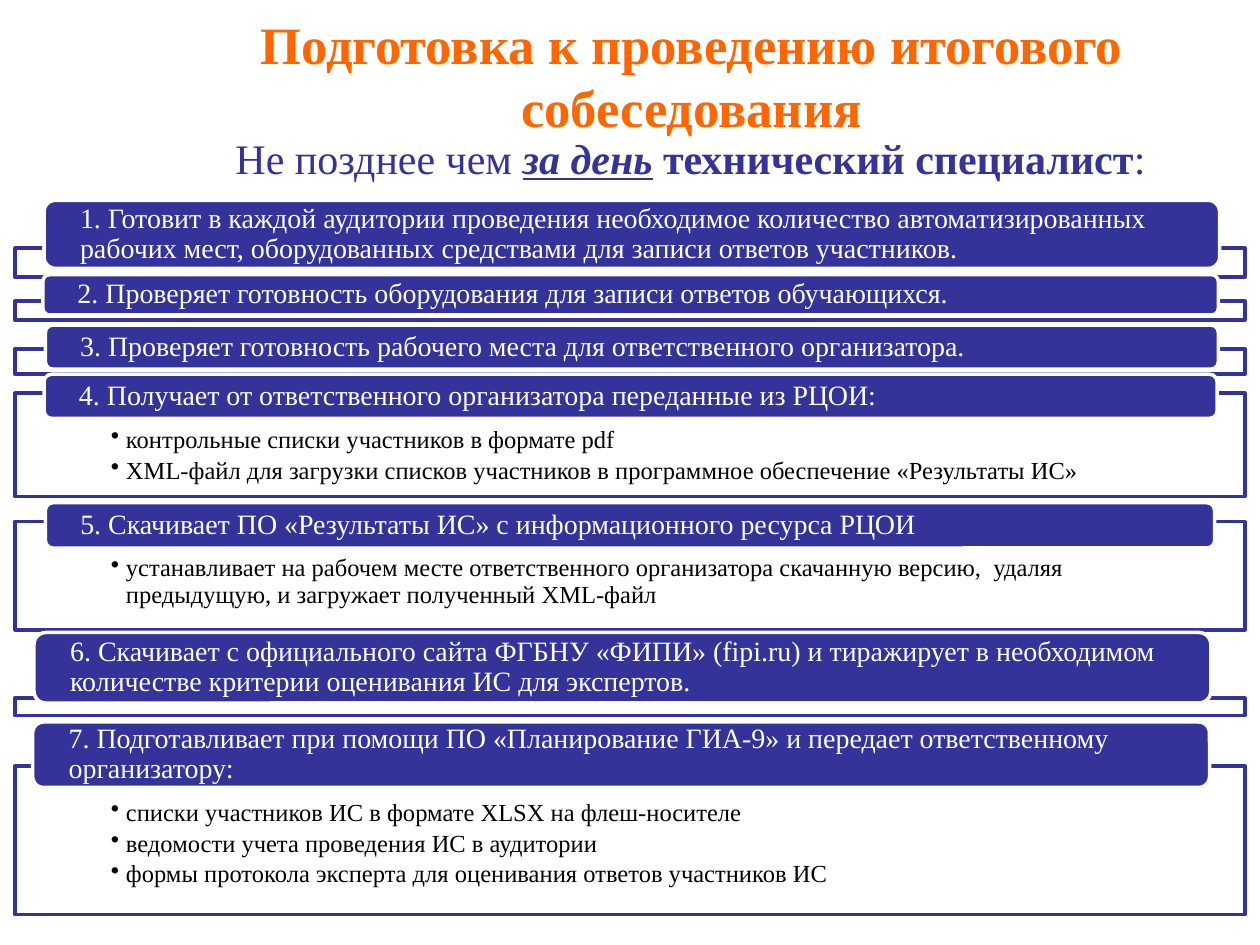
from dataclasses import dataclass

from lxml.etree import SubElement
from pptx import Presentation
from pptx.dml.color import RGBColor
from pptx.enum.shapes import MSO_SHAPE as Preset
from pptx.enum.text import MSO_ANCHOR as Anchor, MSO_AUTO_SIZE as AutoSize, PP_ALIGN as Align
from pptx.oxml.ns import qn
from pptx.util import Inches, Pt

ORANGE = RGBColor(0xFF, 0x66, 0x00)
INDIGO = RGBColor(0x33, 0x33, 0x99)
WHITE = RGBColor(0xFF, 0xFF, 0xFF)
BLACK = RGBColor(0x00, 0x00, 0x00)
COLUMNS, ROWS = 100, 75
FRAME_LEFT, FRAME_WIDTH = 1.2, 97.6

# Each step: bar (left, top, width, height), frame (top, height), heading, items
STEPS = [
    ((3.5, 15.9, 93.3, 5.4), (19.7, 2.3),
     "1. Готовит в каждой аудитории проведения необходимое количество автоматизированных "
     "рабочих мест, оборудованных средствами для записи ответов участников.", []),
    ((3.4, 21.8, 93.3, 3.2), (23.9, 1.5),
     "2. Проверяет готовность оборудования для записи ответов обучающихся.", []),
    ((3.6, 25.8, 93.1, 3.5), (27.7, 2),
     "3. Проверяет готовность рабочего места для ответственного организатора.", []),
    ((3.5, 29.7, 93.1, 3.5), (31.2, 8.2),
     "4. Получает от ответственного организатора переданные из РЦОИ:",
     ["контрольные списки участников в формате pdf",
      "XML-файл для загрузки списков участников в программное обеспечение «Результаты ИС»"]),
    ((3.6, 39.9, 92.8, 3.6), (41.4, 8.6),
     "5. Скачивает ПО «Результаты ИС» с информационного ресурса РЦОИ",
     ["устанавливает на рабочем месте ответственного организатора скачанную версию,  удаляя "
      "предыдущую, и загружает полученный XML-файл"]),
    ((2.7, 50.2, 93.4, 5.6), (55.4, 1.4),
     "6. Скачивает с официального сайта ФГБНУ «ФИПИ» (fipi.ru) и тиражирует в необходимом "
     "количестве критерии оценивания ИС для экспертов.", []),
    ((2.6, 57.3, 93.4, 5.2), (60.8, 11.8),
     "7. Подготавливает при помощи ПО «Планирование ГИА-9» и передает ответственному "
     "организатору:",
     ["списки участников ИС в формате XLSX на флеш-носителе",
      "ведомости учета проведения ИС в аудитории",
      "формы протокола эксперта для оценивания ответов участников ИС"]),
]


@dataclass
class PageBuilder:
    deck: object
    page: object
    font: str = "Times New Roman"

    def place(self, left, top, width, height):
        column, row = self.deck.slide_width / COLUMNS, self.deck.slide_height / ROWS
        return [round(n * unit) for n, unit in
                zip((left, top, width, height), (column, row, column, row))]

    def style(self, para, size, color, bold=None):
        for span in para.runs:
            span.font.name, span.font.size = self.font, Pt(size)
            span.font.color.rgb, span.font.bold = color, bold

    def title(self, text, area):
        box = self.page.shapes.title
        box.left, box.top, box.width, box.height = self.place(*area)
        frame = box.text_frame
        frame.text = text
        frame.auto_size, frame.vertical_anchor = AutoSize.NONE, Anchor.MIDDLE
        frame.paragraphs[0].alignment = Align.CENTER
        self.style(frame.paragraphs[0], 30, ORANGE, True)

    def subtitle(self, spans, area):
        """Spans are pairs of a text and the names of its font switches."""
        frame = self.page.shapes.add_textbox(*self.place(*area)).text_frame
        frame.word_wrap = True
        para = frame.paragraphs[0]
        for text, switches in spans:
            span = para.add_run()
            span.text = text
        self.style(para, 24, INDIGO)
        for span, (text, switches) in zip(para.runs, spans):
            for switch in switches:
                setattr(span.font, switch, True)

    def block(self, preset, area, fill, line, insets, anchor):
        shape = self.page.shapes.add_shape(preset, *self.place(*area))
        shape.shadow.inherit = False
        shape.fill.solid()
        shape.fill.fore_color.rgb = fill
        shape.line.color.rgb, shape.line.width = line, Pt(2)
        frame = shape.text_frame
        frame.word_wrap, frame.vertical_anchor = True, anchor
        side, frame.margin_top, frame.margin_bottom = [Inches(n) for n in insets]
        frame.margin_left = frame.margin_right = side
        return shape

    def bar(self, text, area):
        shape = self.block(Preset.ROUNDED_RECTANGLE, area, INDIGO, WHITE,
                           (0.26, 0, 0), Anchor.MIDDLE)
        shape.text_frame.text = text
        para = shape.text_frame.paragraphs[0]
        para.alignment, para.line_spacing = Align.LEFT, 0.9
        self.style(para, 16, WHITE)

    def frame(self, items, top, height):
        shape = self.block(Preset.RECTANGLE, (FRAME_LEFT, top, FRAME_WIDTH, height),
                           WHITE, INDIGO, (0.76, 0.27, 0.11), Anchor.TOP)
        color = shape.fill._xPr.find(qn("a:solidFill"))[0]
        SubElement(color, qn("a:alpha"), val="90000")
        if not items:
            return
        shape.text_frame.text = "\n".join(items)
        for para in shape.text_frame.paragraphs:
            para.level, para.alignment = 1, Align.LEFT
            para.line_spacing, para.space_after = 0.9, Pt(2.5)
            properties = para._p.get_or_add_pPr()
            properties.set("marL", str(Inches(0.12)))
            properties.set("indent", str(-Inches(0.12)))
            SubElement(properties, qn("a:buChar"), char="•")
            self.style(para, 14, BLACK)


def main():
    deck = Presentation()
    deck.slide_width, deck.slide_height = Inches(10), Inches(7.5)
    builder = PageBuilder(deck, deck.slides.add_slide(deck.slide_layouts[5]))
    builder.title("Подготовка к проведению итогового собеседования", (9.9, -0.3, 90, 12.5))
    for bar_area, frame_rows, heading, items in STEPS:
        builder.frame(items, *frame_rows)
        builder.bar(heading, bar_area)
    builder.subtitle([("Не позднее чем ", []),
                      ("за день", ["bold", "italic", "underline"]),
                      (" ", []),
                      ("технический специалист", ["bold"]),
                      (":", [])], (17.7, 10, 85.8, 5))
    deck.save("out.pptx")


if __name__ == "__main__":
    main()
